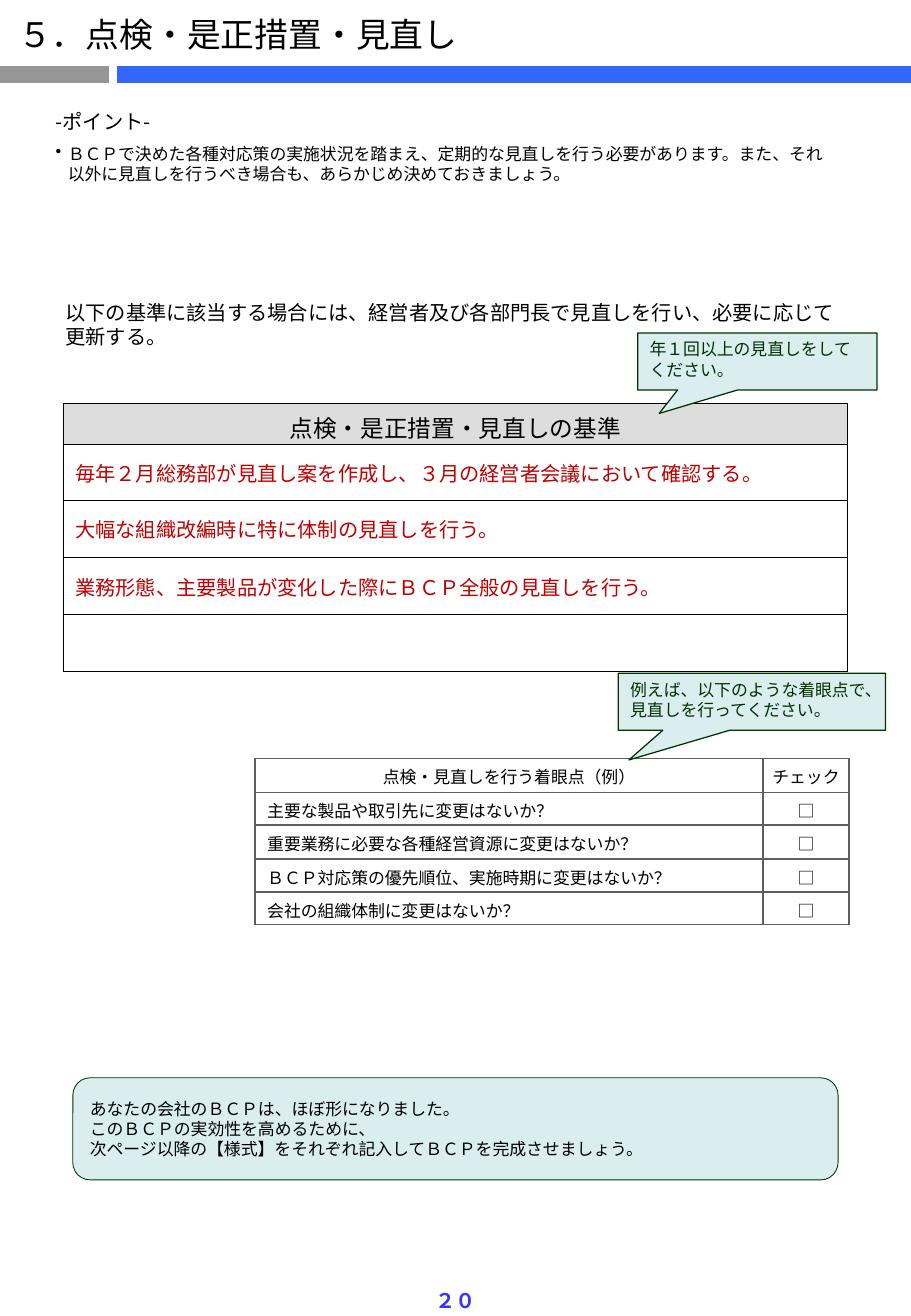
from copy import deepcopy
from dataclasses import dataclass

from lxml import etree
from pptx import Presentation
from pptx.dml.color import RGBColor
from pptx.enum.shapes import MSO_CONNECTOR, MSO_SHAPE
from pptx.enum.text import MSO_ANCHOR, MSO_AUTO_SIZE, PP_ALIGN
from pptx.oxml.ns import qn
from pptx.util import Inches, Pt

LEFT, CENTER = PP_ALIGN.LEFT, PP_ALIGN.CENTER
TOP, MIDDLE = MSO_ANCHOR.TOP, MSO_ANCHOR.MIDDLE
CALLOUT, ROUNDED = MSO_SHAPE.RECTANGULAR_CALLOUT, MSO_SHAPE.ROUNDED_RECTANGLE
STRAIGHT = MSO_CONNECTOR.STRAIGHT
NO_AUTOFIT = MSO_AUTO_SIZE.NONE


@dataclass(frozen=True)
class Theme:
    font: str = "Noto Sans CJK JP"
    black: str = "000000"
    white: str = "FFFFFF"
    grey_bar: str = "969696"
    blue_bar: str = "3366FF"
    page_blue: str = "3333FF"
    header_fill: str = "DDDDDD"
    entry_red: str = "C00000"
    check_border: str = "5F5F5F"
    note_fill: str = "DAEDEF"
    note_green: str = "003300"
    title: int = 20
    header: int = 14
    body: int = 12
    small: int = 10


@dataclass(frozen=True)
class Bar:
    start: float
    end: float
    color: str


@dataclass(frozen=True)
class Note:
    kind: int
    box: tuple[float, float, float, float]
    adjustments: tuple[float, ...]
    lines: tuple[str, ...]
    color: str
    line_width: float
    anchor: int = TOP
    before: float = 0


@dataclass(frozen=True)
class Column:
    width: float
    align: int
    margin: float = 0.1


THEME = Theme()

BARS = (Bar(0, 0.9, THEME.grey_bar), Bar(0.96, 7.5, THEME.blue_bar))

NOTES = (
    Note(CALLOUT, (5.25, 2.74, 1.97, 0.47), (-0.41, 0.91),
         ("年１回以上の見直しをしてください。",), THEME.note_green, 0.75, before=0.1),
    Note(CALLOUT, (5.09, 5.54, 2.2, 0.47), (-0.46, 1.02),
         ("例えば、以下のような着眼点で、見直しを行ってください。",),
         THEME.note_green, 0.75, before=0.1),
    Note(ROUNDED, (0.6, 8.87, 6.3, 0.84), (0.17,),
         ("あなたの会社のＢＣＰは、ほぼ形になりました。",
          "このＢＣＰの実効性を高めるために、\n"
          "次ページ以降の【様式】をそれぞれ記入してＢＣＰを完成させましょう。"),
         THEME.black, 0.5, anchor=MIDDLE),
)

CRITERIA = (
    ("点検・是正措置・見直しの基準",),
    ("毎年２月総務部が見直し案を作成し、３月の経営者会議において確認する。",),
    ("大幅な組織改編時に特に体制の見直しを行う。",),
    ("業務形態、主要製品が変化した際にＢＣＰ全般の見直しを行う。",),
    ("",),
)

VIEWPOINTS = (
    "主要な製品や取引先に変更はないか？",
    "重要業務に必要な各種経営資源に変更はないか？",
    "ＢＣＰ対応策の優先順位、実施時期に変更はないか？",
    "会社の組織体制に変更はないか？",
)
CHECKLIST = (("点検・見直しを行う着眼点（例）", "チェック"),
             *((viewpoint, "□") for viewpoint in VIEWPOINTS))


def rgb(color: str) -> RGBColor:
    return RGBColor.from_string(color)


def write(paragraph, text: str, *, size: float, color: str = THEME.black, bold: bool = False,
          align: int = LEFT, before: float = 0, after: float = 0,
          hanging: float = 0, bullet: str = "") -> None:
    """Fill a paragraph; before is a share of the type size, after is in points."""
    paragraph.text = text
    paragraph.alignment = align
    paragraph.space_before, paragraph.space_after = Pt(size * before), Pt(after)
    for run in paragraph.runs:
        font = run.font
        font.name, font.size, font.bold = THEME.font, Pt(size), bold
        font.color.rgb = rgb(color)
        etree.SubElement(font._element, qn("a:ea"), typeface=THEME.font)
    for line_break in paragraph._p.findall(qn("a:br")):
        line_break.append(deepcopy(paragraph.runs[0].font._element))
    properties = paragraph._p.get_or_add_pPr()
    if hanging:
        properties.set("marL", str(Inches(hanging)))
        properties.set("indent", str(-Inches(hanging)))
    if bullet:
        etree.SubElement(properties, qn("a:buChar"), char=bullet)


def add_text(slide, box: tuple[float, float, float, float], wrap: bool = True):
    frame = slide.shapes.add_textbox(*map(Inches, box)).text_frame
    frame.word_wrap = wrap
    return frame


def add_bar(slide, bar: Bar) -> None:
    line = slide.shapes.add_connector(
        STRAIGHT, Inches(bar.start), Inches(0.61), Inches(bar.end), Inches(0.61))
    line.line.color.rgb = rgb(bar.color)
    line.line.width = Pt(10)
    etree.SubElement(line._element.spPr, qn("a:effectLst"))


def add_note(slide, note: Note) -> None:
    shape = slide.shapes.add_shape(note.kind, *map(Inches, note.box))
    shape.shadow.inherit = False
    for index, value in enumerate(note.adjustments):
        shape.adjustments[index] = value
    shape.fill.solid()
    shape.fill.fore_color.rgb = rgb(THEME.note_fill)
    shape.line.color.rgb = rgb(THEME.note_green)
    shape.line.width = Pt(note.line_width)
    frame = shape.text_frame
    frame.word_wrap, frame.vertical_anchor = True, note.anchor
    for index, text in enumerate(note.lines):
        paragraph = frame.add_paragraph() if index else frame.paragraphs[0]
        write(paragraph, text, size=THEME.small, color=note.color, before=note.before)


def add_borders(cell, color: str, width: float) -> None:
    properties = cell._tc.get_or_add_tcPr()
    for side in ("a:lnL", "a:lnR", "a:lnT", "a:lnB"):
        border = etree.SubElement(properties, qn(side), w=str(Pt(width)))
        fill = etree.SubElement(border, qn("a:solidFill"))
        etree.SubElement(fill, qn("a:srgbClr"), val=color)


def add_grid(slide, left: float, top: float, columns: tuple[Column, ...],
             heights: tuple[float, ...], rows: tuple[tuple[str, ...], ...], *,
             border: str, border_width: float, header_fill: str, header_size: float,
             size: float, color: str, before: float = 0) -> None:
    width = sum(column.width for column in columns)
    table = slide.shapes.add_table(len(rows), len(columns), Inches(left), Inches(top),
                                   Inches(width), Inches(sum(heights))).table
    table.first_row = table.horz_banding = False
    for c, column in enumerate(columns):
        table.columns[c].width = Inches(column.width)
    for r, row in enumerate(rows):
        table.rows[r].height = Inches(heights[r])
        header = r == 0
        for c, column in enumerate(columns):
            cell = table.cell(r, c)
            add_borders(cell, border, border_width)
            cell.fill.solid()
            cell.fill.fore_color.rgb = rgb(header_fill if header else THEME.white)
            cell.vertical_anchor = MIDDLE
            cell.margin_left = cell.margin_right = Inches(column.margin)
            write(cell.text_frame.paragraphs[0], row[c], before=before,
                  size=header_size if header else size,
                  color=THEME.black if header else color,
                  align=CENTER if header else column.align)


def main() -> None:
    deck = Presentation()
    deck.slide_width, deck.slide_height = Inches(7.5), Inches(10.83)
    slide = deck.slides.add_slide(deck.slide_layouts[5])

    # Title and its two-part rule
    title = slide.shapes.title
    title.left, title.top, title.width, title.height = map(Inches, (0.05, 0.06, 4.02, 0.43))
    title.text_frame.auto_size, title.text_frame.vertical_anchor = NO_AUTOFIT, TOP
    write(title.text_frame.paragraphs[0], "５．点検・是正措置・見直し", size=THEME.title)
    for bar in BARS:
        add_bar(slide, bar)

    # Key points
    points = add_text(slide, (0.36, 0.85, 6.93, 0.72))
    write(points.paragraphs[0], "-ポイント-", size=THEME.body, after=6, hanging=0.1)
    write(points.add_paragraph(),
          "ＢＣＰで決めた各種対応策の実施状況を踏まえ、定期的な見直しを行う必要があります。また、それ\n"
          "以外に見直しを行うべき場合も、あらかじめ決めておきましょう。",
          size=THEME.small, after=6, hanging=0.1, bullet="•")

    # Review criteria
    intro = add_text(slide, (0.44, 2.42, 6.71, 0.71))
    write(intro.paragraphs[0],
          "以下の基準に該当する場合には、経営者及び各部門長で見直しを行い、必要に応じて\n更新する。",
          size=THEME.body, before=0.2)
    add_grid(slide, 0.52, 3.32, (Column(6.46, LEFT),), (0.34, 0.46, 0.47, 0.47, 0.47),
             CRITERIA, border=THEME.black, border_width=0.5, header_fill=THEME.header_fill,
             header_size=THEME.header, size=THEME.body, color=THEME.entry_red, before=0.2)

    # Checklist of viewpoints
    add_grid(slide, 2.1, 6.24, (Column(4.18, LEFT), Column(0.71, CENTER, 0.04)),
             (0.28, 0.27, 0.28, 0.27, 0.27), CHECKLIST, border=THEME.check_border,
             border_width=1, header_fill=THEME.white, header_size=THEME.small,
             size=THEME.small, color=THEME.black)

    # Callouts and closing message
    for note in NOTES:
        add_note(slide, note)

    # Page number
    page = add_text(slide, (3.48, 10.55, 0.54, 0.31), wrap=False)
    write(page.paragraphs[0], "２０", size=THEME.body, color=THEME.page_blue,
          bold=True, align=CENTER)

    deck.save("out.pptx")


if __name__ == "__main__":
    main()
